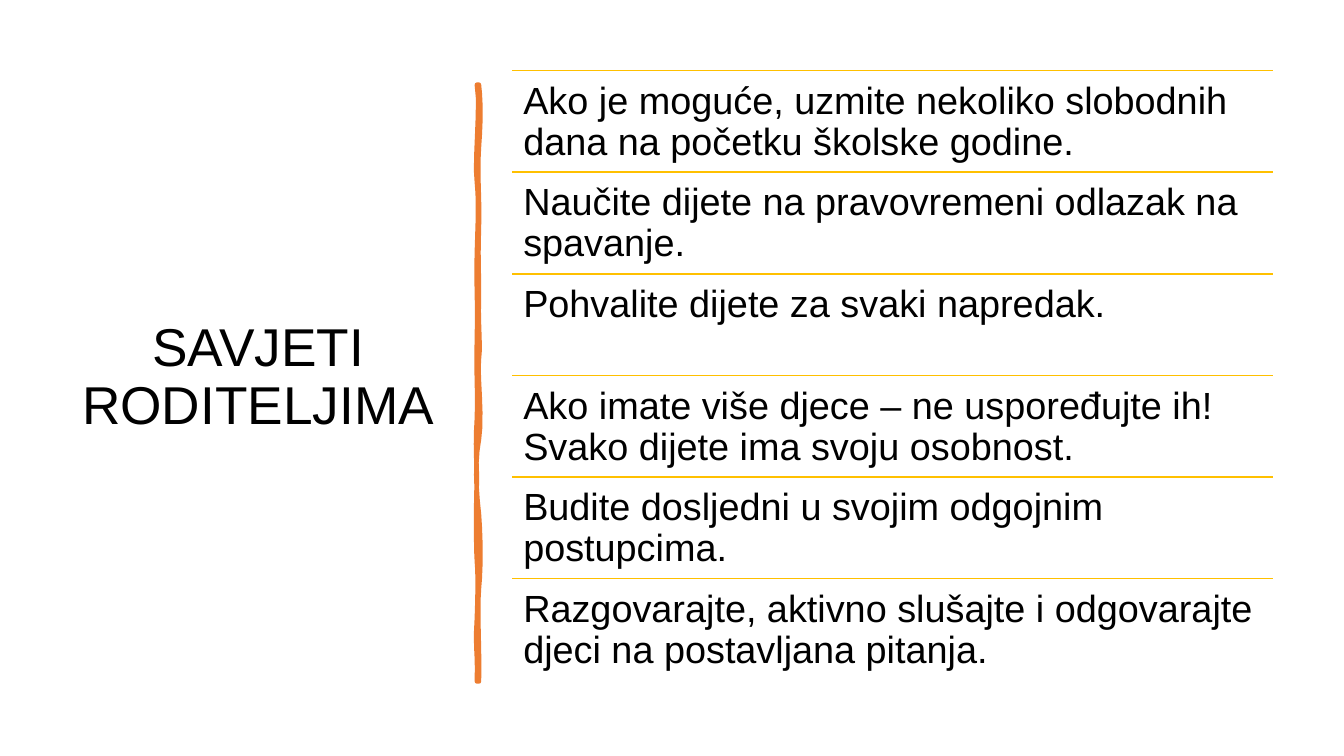
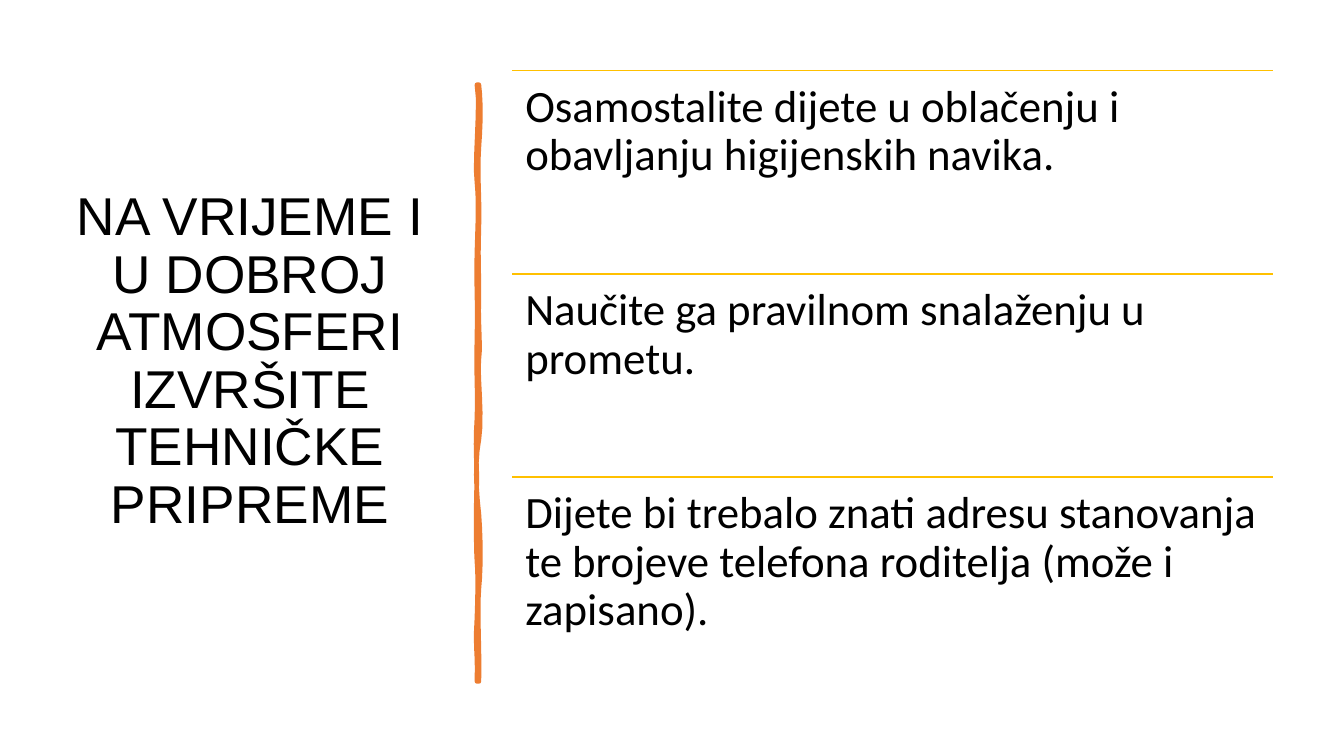
from dataclasses import dataclass

from lxml.etree import SubElement
from pptx import Presentation
from pptx.dml.color import RGBColor
from pptx.enum.shapes import MSO_CONNECTOR
from pptx.enum.text import MSO_ANCHOR, MSO_AUTO_SIZE, PP_ALIGN
from pptx.oxml.ns import qn
from pptx.util import Inches, Pt


@dataclass(frozen=True)
class Theme:
    text: RGBColor = RGBColor(0x00, 0x00, 0x00)
    brush: RGBColor = RGBColor(0xED, 0x7D, 0x31)
    rule: RGBColor = RGBColor(0xFF, 0xC0, 0x00)
    title_font: str = "Arial"
    title_size: int = 38
    line_spacing: float = 0.9
    brush_width: float = 3.25
    rule_width: float = 1


THEME = Theme()
TITLE_WIDTH, TITLE_HEIGHT = 3.74, 6.11
LIST_LEFT, LIST_TOP, LIST_WIDTH, LIST_HEIGHT = 5.08, 0.7, 7.55, 6.05

BRUSH_START = (4.75, 0.84)
BRUSH_CURVES = [
    ((4.77, 1.02), (4.77, 1.19), (4.75, 1.46)),
    ((4.73, 1.73), (4.76, 1.95), (4.75, 2.26)),
    ((4.74, 2.57), (4.75, 2.62), (4.75, 2.94)),
    ((4.74, 3.25), (4.77, 3.42), (4.75, 3.56)),
    ((4.73, 3.7), (4.79, 4.14), (4.75, 4.36)),
    ((4.71, 4.57), (4.72, 4.84), (4.75, 5.1)),
    ((4.77, 5.36), (4.77, 5.64), (4.75, 5.84)),
    ((4.73, 6.03), (4.76, 6.5), (4.75, 6.76)),
    ((4.74, 6.76), (4.73, 6.76), (4.73, 6.76)),
    ((4.74, 6.46), (4.71, 6.44), (4.73, 6.13)),
    ((4.74, 5.83), (4.74, 5.7), (4.73, 5.57)),
    ((4.72, 5.44), (4.72, 4.95), (4.73, 4.77)),
    ((4.73, 4.59), (4.71, 4.45), (4.73, 4.15)),
    ((4.74, 3.86), (4.72, 3.73), (4.73, 3.35)),
    ((4.74, 2.98), (4.72, 2.81), (4.73, 2.5)),
    ((4.74, 2.18), (4.75, 2), (4.73, 1.81)),
    ((4.7, 1.63), (4.77, 1.04), (4.73, 0.84)),
]

SLIDES = [
    {
        "title": "SAVJETI RODITELJIMA",
        "title_at": (0.69, 0.7),
        "font": {"name": "Arial", "size": Pt(27)},
        "inset": 0.11,
        "items": [
            "Ako je moguće, uzmite nekoliko slobodnih dana na početku školske godine.",
            "Naučite dijete na pravovremeni odlazak na spavanje.",
            "Pohvalite dijete za svaki napredak.",
            "Ako imate više djece – ne uspoređujte ih! Svako dijete ima svoju osobnost.",
            "Budite dosljedni u svojim odgojnim postupcima.",
            "Razgovarajte, aktivno slušajte i odgovarajte djeci na postavljana pitanja.",
        ],
    },
    {
        "title": "NA VRIJEME I U DOBROJ ATMOSFERI IZVRŠITE TEHNIČKE PRIPREME",
        "title_at": (0.61, 0.54),
        "font": {"name": "Calibri", "size": Pt(32)},
        "inset": 0.13,
        "items": [
            "Osamostalite dijete u oblačenju i obavljanju higijenskih navika.",
            "Naučite ga pravilnom snalaženju u prometu.",
            "Dijete bi trebalo znati adresu stanovanja te brojeve telefona roditelja (može i zapisano).",
        ],
    },
]


def apply_format(target, values):
    for name, value in values.items():
        setattr(target, name, value)


def write_text(shape, text, font, frame, alignment):
    apply_format(shape.text_frame, {"word_wrap": True, "auto_size": MSO_AUTO_SIZE.NONE, **frame})
    paragraph = shape.text_frame.paragraphs[0]
    apply_format(paragraph, {"alignment": alignment, "line_spacing": THEME.line_spacing})
    run = paragraph.add_run()
    run.text = text
    apply_format(run.font, font)
    run.font.color.rgb = THEME.text


def add_title(slide, text, position):
    title = slide.shapes.title
    left, top = position
    apply_format(title, {
        "left": Inches(left), "top": Inches(top),
        "width": Inches(TITLE_WIDTH), "height": Inches(TITLE_HEIGHT),
    })
    font = {"name": THEME.title_font, "size": Pt(THEME.title_size)}
    write_text(title, text, font, {"vertical_anchor": MSO_ANCHOR.MIDDLE}, PP_ALIGN.CENTER)


def curve_points(start, curves, steps=6):
    for first, second, end in curves:
        for step in range(1, steps + 1):
            t = step / steps
            u = 1 - t
            yield tuple(
                Inches(u**3 * a + 3 * u * u * t * b + 3 * u * t * t * c + t**3 * d)
                for a, b, c, d in zip(start, first, second, end)
            )
        start = end


def add_brush_stroke(slide):
    left, top = BRUSH_START
    builder = slide.shapes.build_freeform(Inches(left), Inches(top))
    builder.add_line_segments(list(curve_points(BRUSH_START, BRUSH_CURVES)), close=True)
    stroke = builder.convert_to_shape()
    stroke.shadow.inherit = False
    stroke.fill.solid()
    stroke.fill.fore_color.rgb = THEME.brush
    stroke.line.color.rgb = THEME.brush
    stroke.line.width = Pt(THEME.brush_width)
    outline = stroke.element.spPr.find(qn("a:ln"))
    SubElement(outline, qn("a:round"))


def add_rule(group, top):
    rule = group.shapes.add_connector(
        MSO_CONNECTOR.STRAIGHT,
        Inches(LIST_LEFT), Inches(top), Inches(LIST_LEFT + LIST_WIDTH), Inches(top),
    )
    rule.line.color.rgb = THEME.rule
    rule.line.width = Pt(THEME.rule_width)
    SubElement(rule.element.spPr, qn("a:effectLst"))


def add_ruled_list(slide, items, font, inset):
    group = slide.shapes.add_group_shape()
    row_height = LIST_HEIGHT / len(items)
    sides = ("left", "top", "right", "bottom")
    frame = {f"margin_{side}": Inches(inset) for side in sides}
    for index, item in enumerate(items):
        top = LIST_TOP + index * row_height
        add_rule(group, top)
        box = group.shapes.add_textbox(
            Inches(LIST_LEFT), Inches(top), Inches(LIST_WIDTH), Inches(row_height)
        )
        write_text(box, item, font, frame, PP_ALIGN.LEFT)


def main():
    presentation = Presentation()
    presentation.slide_width = Inches(13.33)
    presentation.slide_height = Inches(7.5)
    title_only = presentation.slide_layouts.get_by_name("Title Only")
    for content in SLIDES:
        slide = presentation.slides.add_slide(title_only)
        add_title(slide, content["title"], content["title_at"])
        add_brush_stroke(slide)
        add_ruled_list(slide, content["items"], content["font"], content["inset"])
    presentation.save("out.pptx")


if __name__ == "__main__":
    main()
